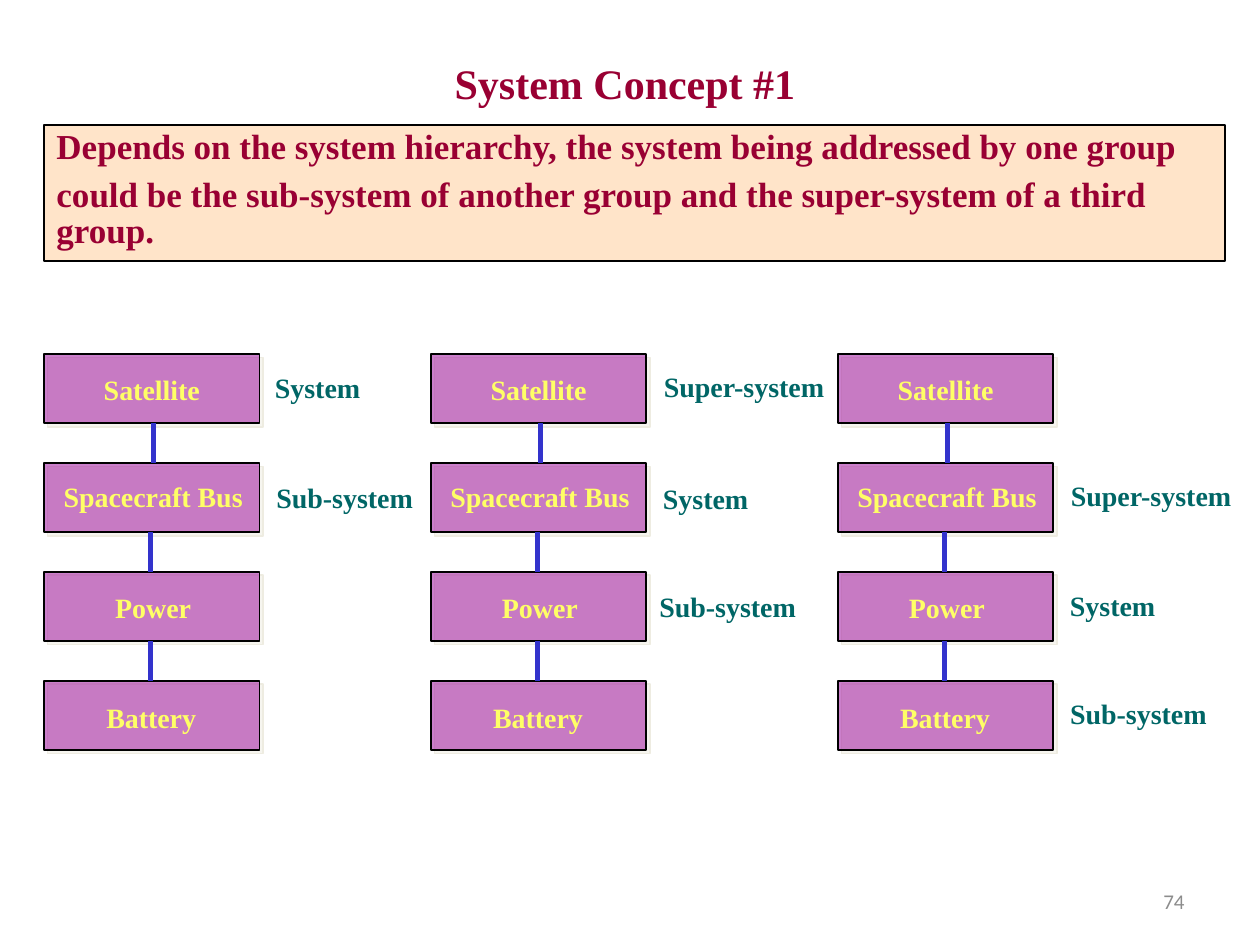
from lxml.etree import SubElement
from pptx import Presentation
from pptx.dml.color import RGBColor
from pptx.enum.shapes import MSO_CONNECTOR, MSO_SHAPE
from pptx.enum.text import MSO_ANCHOR, PP_ALIGN
from pptx.oxml import parse_xml
from pptx.oxml.ns import nsdecls, qn
from pptx.util import Inches, Pt

BLACK = RGBColor(0x00, 0x00, 0x00)
MAROON = RGBColor(0x99, 0x00, 0x33)
PEACH = RGBColor(0xFF, 0xE4, 0xC9)
PURPLE = RGBColor(0x99, 0x00, 0x99)
YELLOW = RGBColor(0xFF, 0xFF, 0x66)
TEAL = RGBColor(0x00, 0x66, 0x66)
BLUE = RGBColor(0x33, 0x33, 0xCC)
GREY = RGBColor(0x8C, 0x8C, 0x8C)
SERIF = "Times New Roman"

TITLE = "System Concept #1"
STATEMENT = [
    "Depends on the system hierarchy, the system being addressed by one group",
    "could be the sub-system of another group and the super-system of a third group.",
]
PAGE_NUMBER = "74"

# Level name, text left offset, top offset and width within its box
LEVELS = [
    ("Satellite", 0.37, 0.10, 0.97),
    ("Spacecraft Bus", -0.08, 0.08, 1.89),
    ("Power", 0.46, 0.10, 0.81),
    ("Battery", 0.39, 0.11, 0.92),
]
LINK_OFFSETS = [0.87, 0.845, 0.845]
COLUMN_LEFTS = [0.35, 3.42, 6.65]
ROW_TOP, ROW_PITCH = 2.81, 0.864
BOX_WIDTH, BOX_HEIGHT = 1.71, 0.55

# For each column: role, left, top
ROLES = [
    [("System", 2.08, 2.89), ("Sub-system", 2.09, 3.76)],
    [("Super-system", 5.16, 2.88), ("System", 5.16, 3.77), ("Sub-system", 5.13, 4.63)],
    [("Super-system", 8.39, 3.75), ("System", 8.39, 4.62), ("Sub-system", 8.39, 5.48)],
]
ROLE_WIDTHS = {"System": 0.88, "Sub-system": 1.29, "Super-system": 1.49}
TEXT_HEIGHT = 0.37

SHADOW = (
    f'<a:effectLst {nsdecls("a")}><a:outerShdw dist="35921" dir="2700000" algn="ctr" '
    'rotWithShape="0"><a:srgbClr val="EEECE1"/></a:outerShdw></a:effectLst>'
)


def write(frame, lines, size, color, align, font=SERIF, bold=True, spacing=None):
    for index, line in enumerate(lines):
        para = frame.paragraphs[0] if index == 0 else frame.add_paragraph()
        para.alignment = align
        if spacing:
            para.line_spacing = spacing
        if index:
            para.space_before = Pt(0.35 * size)
        span = para.add_run()
        span.text = line
        span.font.name = font
        span.font.size = Pt(size)
        span.font.bold = bold
        span.font.color.rgb = color


def add_text(page, text, left, top, width, height, size, color,
             align=PP_ALIGN.CENTER, anchor=MSO_ANCHOR.TOP, wrap=True, **style):
    box = page.shapes.add_textbox(Inches(left), Inches(top), Inches(width), Inches(height))
    box.text_frame.word_wrap = wrap
    box.text_frame.vertical_anchor = anchor
    write(box.text_frame, [text], size, color, align, **style)


def add_box(page, left, top, width, height, fill, line_width):
    box = page.shapes.add_shape(MSO_SHAPE.RECTANGLE, Inches(left), Inches(top),
                                Inches(width), Inches(height))
    box.shadow.inherit = False
    box.fill.solid()
    box.fill.fore_color.rgb = fill
    box.line.color.rgb = BLACK
    box.line.width = Pt(line_width)
    return box


def add_level_box(page, left, top):
    """Half-transparent purple box with a pale offset shadow."""
    box = add_box(page, left, top, BOX_WIDTH, BOX_HEIGHT, PURPLE, 1)
    properties = box._element.spPr
    color = properties.find(qn("a:solidFill")).find(qn("a:srgbClr"))
    SubElement(color, qn("a:alpha")).set("val", "50000")
    properties.replace(properties.find(qn("a:effectLst")), parse_xml(SHADOW))


def add_link(page, x, top, bottom):
    link = page.shapes.add_connector(MSO_CONNECTOR.STRAIGHT, Inches(x), Inches(top),
                                     Inches(x), Inches(bottom))
    link.line.color.rgb = BLUE
    link.line.width = Pt(3)
    SubElement(link._element.spPr, qn("a:effectLst"))


def add_hierarchy(page, left, roles):
    tops = [ROW_TOP + row * ROW_PITCH for row in range(len(LEVELS))]
    for top, (name, dx, dy, width) in zip(tops, LEVELS):
        add_level_box(page, left, top)
        add_text(page, name, left + dx, top + dy, width, TEXT_HEIGHT, 16, YELLOW,
                 wrap=width > BOX_WIDTH)
    for offset, upper, lower in zip(LINK_OFFSETS, tops, tops[1:]):
        add_link(page, left + offset, upper + BOX_HEIGHT, lower)
    for role, role_left, role_top in roles:
        add_text(page, role, role_left, role_top, ROLE_WIDTHS[role], TEXT_HEIGHT, 16, TEAL,
                 anchor=MSO_ANCHOR.MIDDLE, wrap=False)


def main():
    deck = Presentation()
    deck.slide_width, deck.slide_height = Inches(10), Inches(7.5)
    page = deck.slides.add_slide(deck.slide_layouts[6])

    add_text(page, PAGE_NUMBER, 7.17, 6.95, 2.33, 0.4, 12, GREY, align=PP_ALIGN.RIGHT,
             anchor=MSO_ANCHOR.MIDDLE, font="Calibri", bold=False)
    add_text(page, TITLE, 2.4, 0.47, 5.12, 0.44, 24, MAROON, spacing=0.85)

    statement = add_box(page, 0.35, 0.99, 9.37, 1.08, PEACH, 1.25)
    statement.text_frame.word_wrap = True
    statement.text_frame.vertical_anchor = MSO_ANCHOR.TOP
    write(statement.text_frame, STATEMENT, 20, MAROON, PP_ALIGN.LEFT, spacing=0.85)

    for left, roles in zip(COLUMN_LEFTS, ROLES):
        add_hierarchy(page, left, roles)
    deck.save("out.pptx")


if __name__ == "__main__":
    main()
